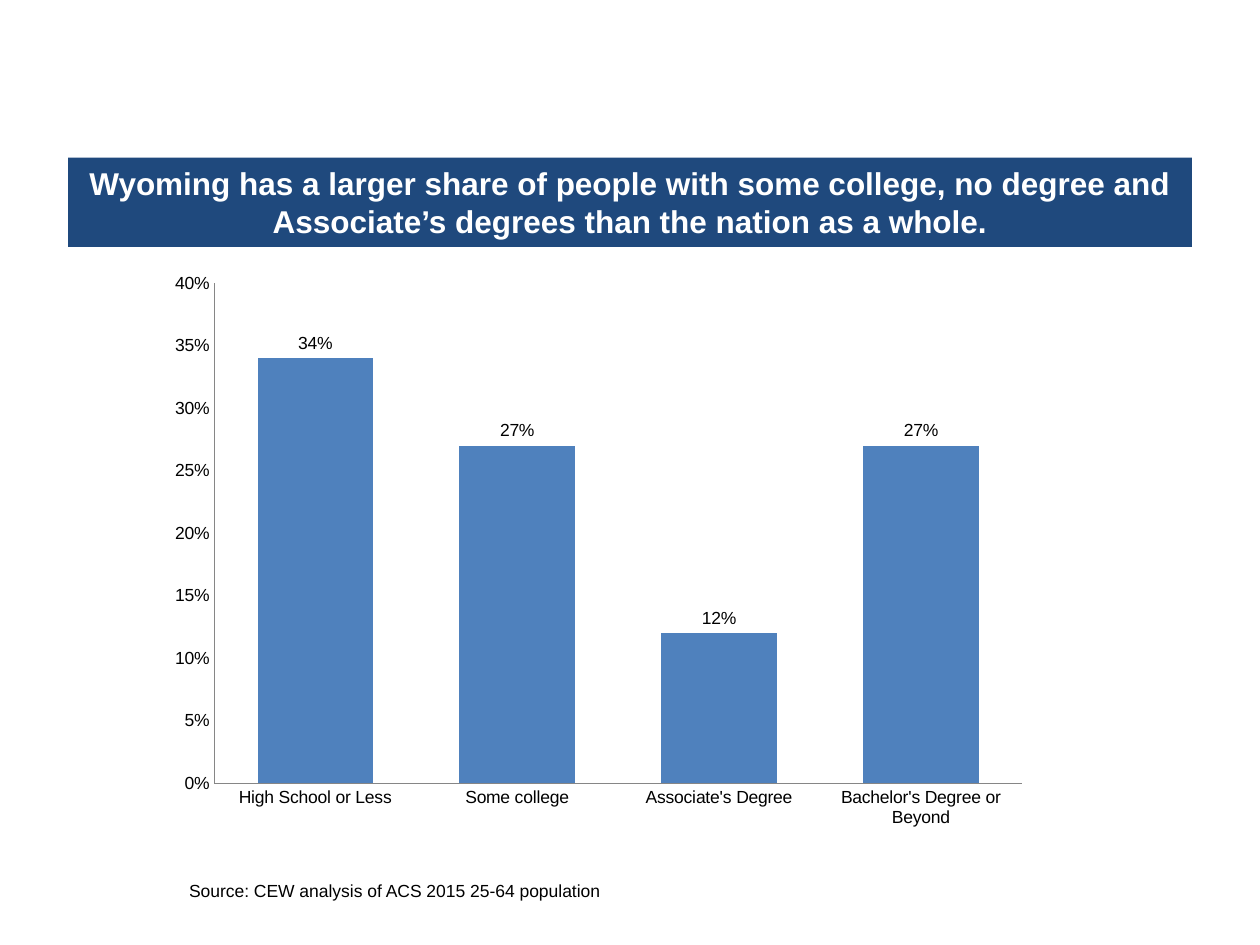
from pptx import Presentation
from pptx.chart.data import CategoryChartData
from pptx.dml.color import RGBColor
from pptx.enum.chart import XL_CHART_TYPE, XL_LABEL_POSITION, XL_TICK_MARK
from pptx.enum.shapes import MSO_SHAPE
from pptx.enum.text import MSO_ANCHOR, PP_ALIGN
from pptx.util import Inches, Pt

COLUMN_CLUSTERED = XL_CHART_TYPE.COLUMN_CLUSTERED
OUTSIDE_END = XL_LABEL_POSITION.OUTSIDE_END
NO_TICK = XL_TICK_MARK.NONE
RECTANGLE = MSO_SHAPE.RECTANGLE
MIDDLE = MSO_ANCHOR.MIDDLE
CENTER = PP_ALIGN.CENTER

NAVY = RGBColor(0x1F, 0x49, 0x7D)
BLUE = RGBColor(0x4F, 0x81, 0xBD)
GRAY = RGBColor(0x86, 0x86, 0x86)
BLACK = RGBColor(0, 0, 0)
WHITE = RGBColor(0xFF, 0xFF, 0xFF)

TITLE_FORMAT = {"name": "Arial", "size": Pt(18), "bold": True}
BODY_FORMAT = {"name": "Arial", "size": Pt(10), "bold": False}
PERCENT = "0%"

HEADLINE = (
    "Wyoming has a larger share of people with some college, no degree and "
    "Associate’s degrees than the nation as a whole."
)
SOURCE = "Source: CEW analysis of ACS 2015 25-64 population"
EDUCATION_SHARES = {
    "High School or Less": 0.34,
    "Some college": 0.27,
    "Associate's Degree": 0.12,
    "Bachelor's Degree or Beyond": 0.27,
}


def format_font(font, values, color):
    for name, value in values.items():
        setattr(font, name, value)
    font.color.rgb = color


def add_headline(slide, text, left, top, width, height):
    shape = slide.shapes.add_shape(
        RECTANGLE, Inches(left), Inches(top), Inches(width), Inches(height)
    )
    shape.shadow.inherit = False
    shape.fill.solid()
    shape.fill.fore_color.rgb = NAVY
    shape.line.fill.background()
    frame = shape.text_frame
    frame.word_wrap = True
    frame.vertical_anchor = MIDDLE
    paragraph = frame.paragraphs[0]
    paragraph.text = text
    paragraph.alignment = CENTER
    format_font(paragraph.font, TITLE_FORMAT, WHITE)


def add_source_table(slide, text, left, top, width, height):
    table = slide.shapes.add_table(
        1, 1, Inches(left), Inches(top), Inches(width), Inches(height)
    ).table
    table.first_row = False
    table.horz_banding = False
    cell = table.cell(0, 0)
    cell.fill.background()
    for side in ("left", "right", "top", "bottom"):
        setattr(cell, f"margin_{side}", 0)
    paragraph = cell.text_frame.paragraphs[0]
    paragraph.text = text
    format_font(paragraph.font, BODY_FORMAT, BLACK)


def format_axis(axis):
    axis.has_major_gridlines = False
    axis.major_tick_mark = NO_TICK
    axis.minor_tick_mark = NO_TICK
    axis.format.line.color.rgb = GRAY
    axis.format.line.width = Pt(0.75)


def add_column_chart(slide, shares, left, top, width, height):
    data = CategoryChartData(number_format=PERCENT)
    data.categories = list(shares)
    data.add_series("Series 1", list(shares.values()))
    chart = slide.shapes.add_chart(
        COLUMN_CLUSTERED,
        Inches(left), Inches(top), Inches(width), Inches(height), data,
    ).chart
    chart.has_legend = False
    chart.has_title = False
    format_font(chart.font, BODY_FORMAT, BLACK)

    # Axes
    format_axis(chart.category_axis)
    value_axis = chart.value_axis
    format_axis(value_axis)
    value_axis.minimum_scale = 0
    value_axis.maximum_scale = 0.4
    value_axis.major_unit = 0.05
    value_axis.tick_labels.number_format = PERCENT
    value_axis.tick_labels.number_format_is_linked = False

    # Columns and their labels
    plot = chart.plots[0]
    plot.gap_width = 75
    plot.vary_by_categories = False
    series = plot.series[0]
    series.format.fill.solid()
    series.format.fill.fore_color.rgb = BLUE
    labels = series.data_labels
    labels.show_value = True
    labels.number_format = PERCENT
    labels.number_format_is_linked = False
    labels.position = OUTSIDE_END


def main():
    presentation = Presentation()
    presentation.slide_width = Inches(10)
    presentation.slide_height = Inches(7.5)
    slide = presentation.slides.add_slide(presentation.slide_layouts[6])

    add_headline(slide, HEADLINE, 0.54, 1.25, 8.92, 0.71)
    add_source_table(slide, SOURCE, 1.5, 7, 6.33, 0.17)
    add_column_chart(slide, EDUCATION_SHARES, 1.25, 2.08, 7, 4.58)

    presentation.save("out.pptx")


if __name__ == "__main__":
    main()
